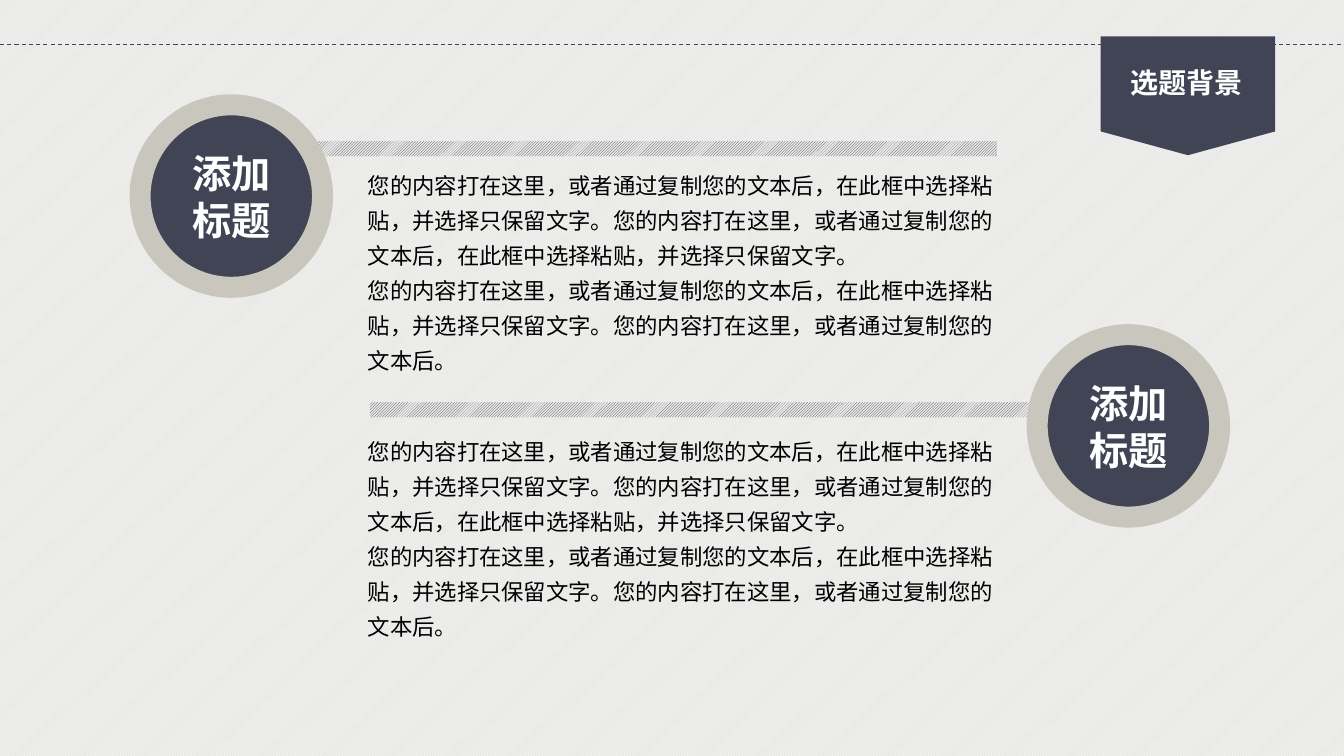
from lxml import etree
from pptx import Presentation
from pptx import util as u
from pptx.dml.color import RGBColor
from pptx.enum import dml, shapes, text
from pptx.oxml import ns

COLORS = {"navy": "414455", "sand": "C8C6BD", "paper": "E8E8E6",
          "white": "FFFFFF", "black": "000000"}
FONT = "Noto Sans CJK SC"
COLS, ROWS = 160, 90
BAR_W, BAR_H = 82.2, 1.8
DISC = 21.72
BODY_COL, BODY_W, BODY_H = 42.6, 77.52, 26.4

HEADING = "添加标题"
OPENING = "您的内容打在这里，或者通过复制您的文本后"
ENDING = "，在此框中选择粘贴，并选择只保留文字。"
BODY = [(OPENING + ENDING) * 2, OPENING + ENDING + OPENING + "。"]

SECTIONS = [
    {"bar": (36.48, 16.8), "disc": (16.68, 12.48), "body_row": 18.96},
    {"bar": (44.04, 47.88), "disc": (123.48, 39.84), "body_row": 50.64},
]


class Deck:
    def __init__(self):
        self.prs = Presentation()
        self.prs.slide_width = u.Inches(13.33)
        self.prs.slide_height = u.Inches(7.5)
        self.s = self.prs.slides.add_slide(self.prs.slide_layouts[6])

    def x(self, cols):
        return round(self.prs.slide_width * cols / COLS)

    def y(self, rows):
        return round(self.prs.slide_height * rows / ROWS)

    def box(self, col, row, w, h):
        return self.x(col), self.y(row), self.x(w), self.y(h)

    def color(self, name):
        return RGBColor.from_string(COLORS[name])

    def stripes(self, fill, fore):
        fill.patterned()
        fill.pattern = dml.MSO_PATTERN.LIGHT_UPWARD_DIAGONAL
        fill.fore_color.rgb = self.color(fore)
        fill.back_color.rgb = self.color("paper")

    def background(self):
        self.stripes(self.s.background.fill, "white")

    def shape(self, kind, *place):
        sp = self.s.shapes.add_shape(kind, *self.box(*place))
        sp.shadow.inherit = False
        sp.line.fill.background()
        sp.fill.solid()
        sp.fill.fore_color.rgb = self.color("navy")
        return sp

    def bar(self, col, row):
        sp = self.shape(shapes.MSO_SHAPE.RECTANGLE, col, row, BAR_W, BAR_H)
        self.stripes(sp.fill, "navy")

    def dashed_rule(self, row):
        c = self.s.shapes.add_connector(shapes.MSO_CONNECTOR.STRAIGHT,
                                        0, self.y(row), self.x(COLS), self.y(row))
        c.line.color.rgb = self.color("navy")
        c.line.width = u.Pt(0.75)
        c.line.dash_style = dml.MSO_LINE.DASH
        etree.SubElement(c._element.spPr, ns.qn("a:effectLst"))

    def set_text(self, tf, lines, size, color, bold=False, align=None, spacing=None):
        tf.text = "\n".join(lines)
        for p in tf.paragraphs:
            p.alignment = align
            p.line_spacing = spacing
            for r in p.runs:
                r.font.size = u.Pt(size)
                r.font.bold = bold
                r.font.color.rgb = self.color(color)
                r.font.name = FONT
                ea = etree.SubElement(r._r.get_or_add_rPr(), ns.qn("a:ea"))
                ea.set("typeface", FONT)

    def textbox(self, place, lines, size, color, wrap=True, **style):
        tf = self.s.shapes.add_textbox(*self.box(*place)).text_frame
        self.set_text(tf, lines, size, color, **style)
        tf.word_wrap = wrap
        tf.auto_size = text.MSO_AUTO_SIZE.SHAPE_TO_FIT_TEXT

    def banner(self, title):
        self.shape(shapes.MSO_SHAPE.FLOWCHART_OFFPAGE_CONNECTOR,
                   131.04, 4.32, 20.76, 14.16)
        self.textbox((133.44, 7.2, 15.84, 5.28), [title], 20, "white",
                     wrap=False, bold=True)

    def disc(self, col, row):
        sp = self.shape(shapes.MSO_SHAPE.OVAL, col, row, DISC, DISC)
        sp.line.color.rgb = self.color("sand")
        sp.line.width = u.Pt(15)
        tf = sp.text_frame
        tf.word_wrap = True
        tf.vertical_anchor = text.MSO_ANCHOR.MIDDLE
        self.set_text(tf, [HEADING], 28, "white", bold=True,
                      align=text.PP_ALIGN.CENTER)

    def body(self, row):
        self.textbox((BODY_COL, row, BODY_W, BODY_H), BODY, 16, "black", spacing=1.3)


def main():
    deck = Deck()
    deck.background()
    for section in reversed(SECTIONS):
        deck.bar(*section["bar"])
    deck.dashed_rule(5.28)
    deck.banner("选题背景")
    for section in SECTIONS:
        deck.disc(*section["disc"])
        deck.body(section["body_row"])
    deck.prs.save("out.pptx")


if __name__ == "__main__":
    main()
